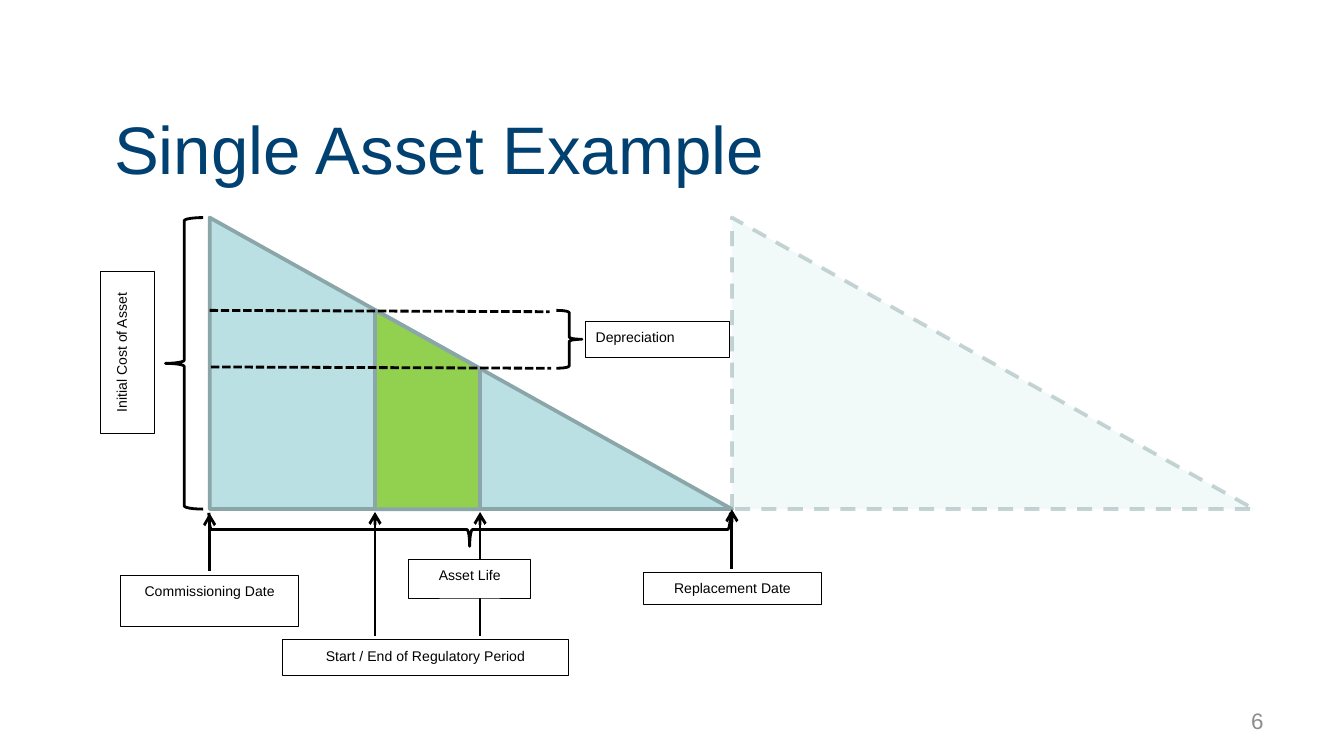
from dataclasses import dataclass

from lxml import etree
from pptx import Presentation
from pptx.dml.color import RGBColor
from pptx.enum.dml import MSO_LINE
from pptx.enum.shapes import MSO_CONNECTOR, MSO_SHAPE
from pptx.enum.text import MSO_ANCHOR, MSO_AUTO_SIZE, PP_ALIGN
from pptx.oxml.ns import qn
from pptx.util import Pt

STRAIGHT = MSO_CONNECTOR.STRAIGHT
RECTANGLE, TRIANGLE = MSO_SHAPE.RECTANGLE, MSO_SHAPE.ISOSCELES_TRIANGLE
LEFT_BRACE, RIGHT_BRACE = MSO_SHAPE.LEFT_BRACE, MSO_SHAPE.RIGHT_BRACE
DASH, SHORT_DASH = MSO_LINE.DASH, MSO_LINE.SQUARE_DOT
LEFT, CENTER, RIGHT = PP_ALIGN.LEFT, PP_ALIGN.CENTER, PP_ALIGN.RIGHT
TOP, MIDDLE = MSO_ANCHOR.TOP, MSO_ANCHOR.MIDDLE

FONT = "Arial"
BLACK = RGBColor(0x00, 0x00, 0x00)
WHITE = RGBColor(0xFF, 0xFF, 0xFF)
NAVY = RGBColor(0x00, 0x41, 0x71)
GRAY = RGBColor(0x8C, 0x8C, 0x8C)
PALE_BLUE = RGBColor(0xBB, 0xE0, 0xE3)
SLATE = RGBColor(0x8A, 0xA6, 0xA8)
GREEN = RGBColor(0x92, 0xD0, 0x50)

# Time runs along x, asset value along y (points)
START, LIFE = 112.3, 279.8
PEAK, COST = 116.6, 156.2
BASE = PEAK + COST
REPLACED = START + LIFE
PERIOD_START, PERIOD_END = 200.9, 257.2


@dataclass(frozen=True)
class Area:
    left: float
    top: float
    width: float
    height: float


@dataclass(frozen=True)
class Label:
    text: str
    area: Area
    align: PP_ALIGN = CENTER
    filled: bool = True
    vertical: bool = False


@dataclass(frozen=True)
class Line:
    x1: float
    y1: float
    x2: float
    y2: float
    arrow: bool = False


def value_at(x: float) -> float:
    """Height on the page of the depreciation slope at x."""
    return PEAK + COST * (x - START) / LIFE


def add_span(para, text: str, size: float, color: RGBColor) -> None:
    span = para.add_run()
    span.text = text
    span.font.name = FONT
    span.font.size = Pt(size)
    span.font.color.rgb = color


def set_outline(shape, color: RGBColor, width: float) -> None:
    shape.line.color.rgb = color
    shape.line.width = Pt(width)


def set_fill(shape, color: RGBColor | None) -> None:
    if color is None:
        shape.fill.background()
    else:
        shape.fill.solid()
        shape.fill.fore_color.rgb = color


def set_opacity(shape, fill: int, line: int) -> None:
    """Make fill and outline see-through, in percent of full opacity."""
    properties = shape._element.spPr
    for parent, percent in ((properties, fill), (properties.find(qn("a:ln")), line)):
        color = parent.find(qn("a:solidFill"))[0]
        etree.SubElement(color, qn("a:alpha")).set("val", str(percent * 1000))


def place(shape, area: Area) -> None:
    shape.left, shape.top = Pt(area.left), Pt(area.top)
    shape.width, shape.height = Pt(area.width), Pt(area.height)


def add_shape(page, kind: MSO_SHAPE, area: Area, fill: RGBColor | None,
              line: RGBColor, width: float):
    shape = page.shapes.add_shape(kind, Pt(area.left), Pt(area.top),
                                  Pt(area.width), Pt(area.height))
    shape.shadow.inherit = False
    set_fill(shape, fill)
    set_outline(shape, line, width)
    return shape


def add_asset(page, left: float):
    triangle = add_shape(page, TRIANGLE, Area(left, PEAK, LIFE, COST), PALE_BLUE, SLATE, 2)
    triangle.adjustments[0] = 0
    return triangle


def add_brace(page, kind: MSO_SHAPE, area: Area, rotation: float = 0) -> None:
    add_shape(page, kind, area, None, BLACK, 1.5).rotation = rotation


def add_period(page) -> None:
    outline = page.shapes.build_freeform(Pt(PERIOD_START), Pt(value_at(PERIOD_START)))
    outline.add_line_segments([
        (Pt(PERIOD_START), Pt(BASE)),
        (Pt(PERIOD_END), Pt(BASE)),
        (Pt(PERIOD_END), Pt(value_at(PERIOD_END))),
    ])
    period = outline.convert_to_shape()
    period.shadow.inherit = False
    set_fill(period, GREEN)
    set_outline(period, SLATE, 2)


def add_line(page, line: Line) -> None:
    connector = page.shapes.add_connector(STRAIGHT, Pt(line.x1), Pt(line.y1),
                                          Pt(line.x2), Pt(line.y2))
    set_outline(connector, BLACK, 1.5)
    properties = connector._element.spPr
    if line.arrow:
        etree.SubElement(properties.find(qn("a:ln")), qn("a:tailEnd")).set("type", "arrow")
    else:
        connector.line.dash_style = SHORT_DASH
    etree.SubElement(properties, qn("a:effectLst"))


def add_label(page, label: Label) -> None:
    box = add_shape(page, RECTANGLE, label.area, WHITE if label.filled else None, BLACK, 0.5)
    frame = box.text_frame
    frame.word_wrap = True
    frame.vertical_anchor = TOP
    frame.margin_left = frame.margin_right = Pt(5.2)
    frame.margin_top = frame.margin_bottom = Pt(2.6)
    if label.vertical:
        frame._txBody.bodyPr.set("vert", "vert270")
    para = frame.paragraphs[0]
    para.alignment = label.align
    para.line_spacing = 1.15
    para.space_after = Pt(7.5)
    add_span(para, label.text, 7.5, BLACK)


def add_line_text(shape, text: str, size: float, color: RGBColor, align: PP_ALIGN) -> None:
    frame = shape.text_frame
    frame.word_wrap = True
    frame.auto_size = MSO_AUTO_SIZE.NONE
    frame.vertical_anchor = MIDDLE
    frame.paragraphs[0].alignment = align
    add_span(frame.paragraphs[0], text, size, color)


ARROWS = [
    Line(PERIOD_END, 340.6, PERIOD_END, 274.3, arrow=True),
    Line(START, 306, START, 275, arrow=True),
    Line(REPLACED, 304.6, REPLACED, 272.9, arrow=True),
    Line(PERIOD_START, 340.6, PERIOD_START, 274.3, arrow=True),
]
VALUE_LINES = [
    Line(START, 166.3, 294.5, 167),
    Line(113, 196.6, 295.2, 197.3),
]
LABELS = [
    Label("Asset Life", Area(218.9, 299.5, 65.5, 20.9)),
    Label("Initial Cost of Asset", Area(54, 145.4, 28.8, 87.1), vertical=True),
    Label("Commissioning Date", Area(64.8, 308.2, 95, 27.4)),
    Label("Replacement Date", Area(344.9, 306.7, 95, 17.3)),
    Label("Depreciation", Area(313.9, 172.1, 77, 19.4), align=LEFT, filled=False),
    Label("Start / End of Regulatory Period", Area(151.2, 342.7, 153.4, 19.4)),
]


def main() -> None:
    deck = Presentation()
    deck.slide_width, deck.slide_height = Pt(720), Pt(405)
    page = deck.slides.add_slide(deck.slide_layouts[5])

    title = page.shapes.title
    place(title, Area(54, 54, 612, 49.7))
    add_line_text(title, "Single Asset Example", 36, NAVY, LEFT)
    number = page.shapes.add_textbox(Pt(516.2), Pt(375.1), Pt(167.8), Pt(21.6))
    add_line_text(number, "6", 12, GRAY, RIGHT)

    add_brace(page, RIGHT_BRACE, Area(298.1, 166.3, 13.7, 31))
    add_asset(page, START)
    add_period(page)
    add_brace(page, LEFT_BRACE, Area(88.6, PEAK, 20.2, COST))
    add_brace(page, RIGHT_BRACE, Area(242.6, 144, 18, 279.4), rotation=90)
    replacement = add_asset(page, REPLACED)
    replacement.line.dash_style = DASH
    set_opacity(replacement, fill=18, line=48)

    for line in ARROWS + VALUE_LINES:
        add_line(page, line)
    for label in LABELS:
        add_label(page, label)
    deck.save("out.pptx")


if __name__ == "__main__":
    main()
